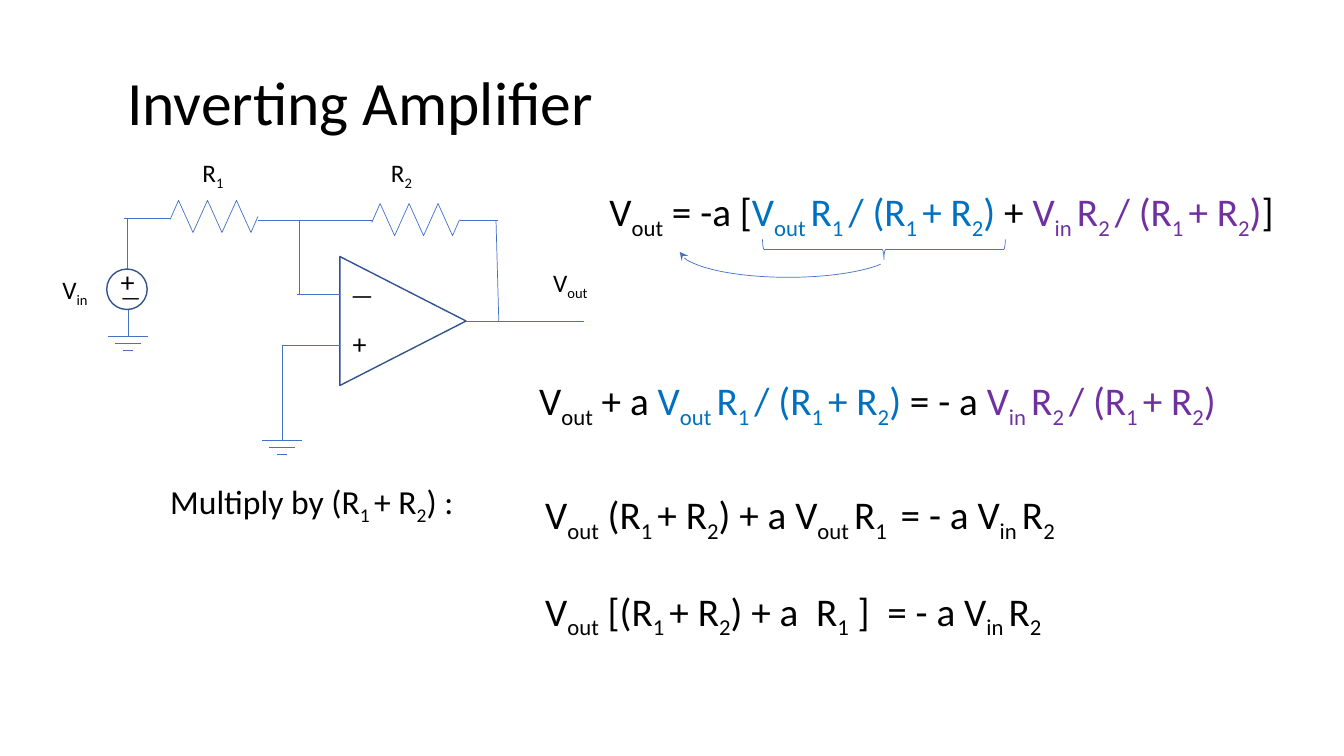
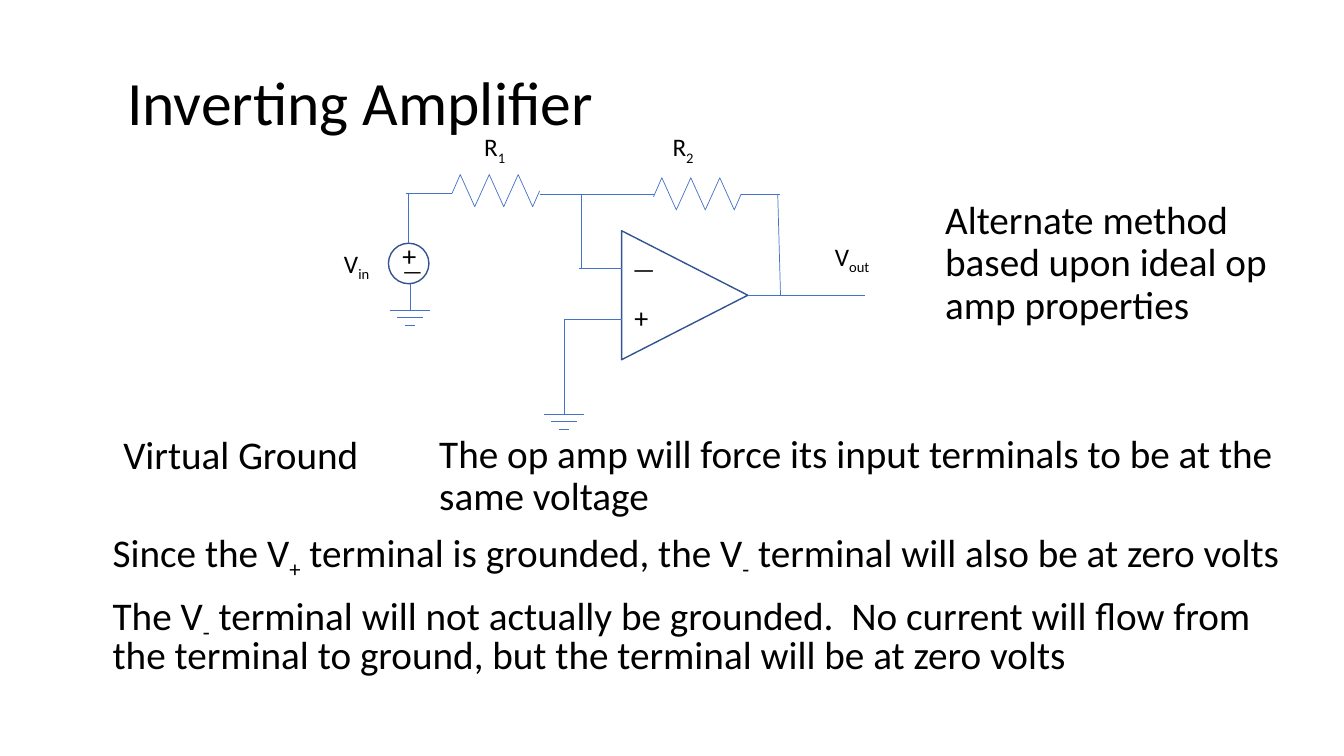
from dataclasses import dataclass

from lxml import etree
from pptx import Presentation
from pptx.dml.color import RGBColor
from pptx.enum.shapes import MSO_CONNECTOR, MSO_SHAPE
from pptx.enum.text import MSO_ANCHOR, PP_ALIGN
from pptx.oxml.ns import qn
from pptx.util import Cm, Pt

STRAIGHT = MSO_CONNECTOR.STRAIGHT
TRIANGLE = MSO_SHAPE.ISOSCELES_TRIANGLE
OVAL = MSO_SHAPE.OVAL
BRACE = MSO_SHAPE.RIGHT_BRACE
ARC = MSO_SHAPE.ARC
LEFT, CENTER = PP_ALIGN.LEFT, PP_ALIGN.CENTER
MIDDLE = MSO_ANCHOR.MIDDLE


@dataclass(frozen=True)
class Theme:
    font: str = "Calibri"
    ink: RGBColor = RGBColor.from_string("000000")
    wire: RGBColor = RGBColor.from_string("4472C4")
    outline: RGBColor = RGBColor.from_string("325491")
    feedback: RGBColor = RGBColor.from_string("0070C0")
    source: RGBColor = RGBColor.from_string("7030A0")
    title: int = 44
    body: int = 28
    note: int = 24
    plus: int = 20
    label: int = 18
    minus: int = 16
    thin: float = 0.5
    medium: float = 1


THEME = Theme()
SUM = "(R~1 ~+ R~2~)"
FEEDBACK = (f"V~out ~R~1 ~/ {SUM}", THEME.feedback)
SOURCE = (f"V~in ~R~2 ~/ {SUM}", THEME.source)


class Deck:
    def __init__(self, theme):
        self.theme = theme
        self.prs = Presentation()
        self.prs.slide_width, self.prs.slide_height = Cm(33.87), Cm(19.05)
        self.s = None
        self.shapes = None

    def slide(self, title):
        self.s = self.prs.slides.add_slide(self.prs.slide_layouts[5])
        self.shapes = self.s.shapes
        sp = self.s.shapes.title
        sp.left, sp.top, sp.width, sp.height = Cm(2.95), Cm(0.81), Cm(29.21), Cm(3.68)
        sp.text_frame.vertical_anchor = MIDDLE
        self.fill_text(sp.text_frame, [(title, None)], self.theme.title, spacing=0.9)

    def fill_text(self, tf, segments, size, align=LEFT, spacing=None, before=None):
        tf.word_wrap = True
        p = tf.paragraphs[0]
        p.alignment = align
        p.line_spacing = spacing
        if before is not None:
            p.space_before = Pt(before)
        p.font.name, p.font.size = self.theme.font, Pt(size)
        p.font.color.rgb = self.theme.ink
        for text, color in segments:
            for i, part in enumerate(text.split("~")):
                if not part:
                    continue
                r = p.add_run()
                r.text = part
                if color is not None:
                    r.font.color.rgb = color
                if i % 2:
                    r._r.get_or_add_rPr().set("baseline", "-25000")

    def text(self, x, y, w, h, *segments, size=None, align=LEFT, spacing=0.9):
        sp = self.shapes.add_textbox(Cm(x), Cm(y), Cm(w), Cm(h))
        pairs = [(seg, None) if isinstance(seg, str) else seg for seg in segments]
        self.fill_text(sp.text_frame, pairs, size or self.theme.body, align, spacing, 10)

    def label(self, x, y, text, size=None, w=1.45):
        sp = self.shapes.add_textbox(Cm(x), Cm(y), Cm(w), Cm(1.02))
        self.fill_text(sp.text_frame, [(text, None)], size or self.theme.label)

    def outline(self, sp, color, width):
        sp.shadow.inherit = False
        sp.fill.background()
        sp.line.color.rgb, sp.line.width = color, Pt(width)

    def shape(self, kind, x, y, w, h, color, width, rotation=0):
        sp = self.shapes.add_shape(kind, Cm(x), Cm(y), Cm(w), Cm(h))
        sp.rotation = rotation
        self.outline(sp, color, width)
        return sp

    def wire(self, x1, y1, x2, y2):
        cxn = self.shapes.add_connector(STRAIGHT, Cm(x1), Cm(y1), Cm(x2), Cm(y2))
        cxn.line.color.rgb, cxn.line.width = self.theme.wire, Pt(self.theme.thin)
        etree.SubElement(cxn._element.spPr, qn("a:effectLst"))

    def brace(self, x, y, w, h):
        self.shape(BRACE, x, y, w, h, self.theme.wire, self.theme.thin, 90)

    def arc_arrow(self, x, y, w, h):
        sp = self.shape(ARC, x, y, w, h, self.theme.wire, self.theme.thin)
        sp.adjustments[0], sp.adjustments[1] = 5.43, 107.26
        etree.SubElement(sp.line._get_or_add_ln(), qn("a:tailEnd"), type="stealth")

    def resistor(self, x, y):
        peaks = [(x + 0.21 + 0.365 * i, y + 0.81 * (i % 2)) for i in range(6)]
        points = peaks + [(x + 2.21, y + 0.41)]
        fb = self.shapes.build_freeform(Cm(x), Cm(y + 0.48))
        fb.add_line_segments([(Cm(px), Cm(py)) for px, py in points], close=False)
        self.outline(fb.convert_to_shape(), self.theme.wire, self.theme.thin)

    def ground(self, x, y):
        for half, drop in ((0.51, 0), (0.32, 0.17), (0.13, 0.36)):
            self.wire(x - half, y + drop, x + half, y + drop)

    def circuit(self, dx=0, dy=0):
        t = self.theme
        grp = self.s.shapes.add_group_shape()
        self.shapes = grp.shapes
        self.shape(TRIANGLE, 8.53, 6.5, 3.25, 3.18, t.outline, t.medium, 90)
        self.shape(OVAL, 2.69, 6.78, 1.02, 1.02, t.outline, t.medium)
        for points in (
            (7.49, 7.42, 8.57, 7.42),
            (7.11, 8.69, 8.57, 8.69),
            (7.11, 8.69, 7.11, 11.1),
            (11.75, 8.09, 14.71, 8.09),
            (6.5, 5.56, 9.4, 5.56),
            (7.54, 5.56, 7.54, 7.42),
            (3.2, 5.51, 3.2, 6.78),
            (3.12, 5.51, 4.29, 5.51),
            (12.5, 5.56, 12.57, 8.09),
            (11.58, 5.56, 12.55, 5.56),
            (3.23, 7.8, 3.23, 8.48),
        ):
            self.wire(*points)
        self.resistor(4.29, 5.05)
        self.resistor(9.37, 5.13)
        self.ground(7.11, 11.1)
        self.ground(3.23, 8.48)
        for x, y, text in (
            (4.85, 3.84, "R~1~"),
            (9.6, 3.84, "R~2~"),
            (1.32, 6.78, "V~in~"),
            (13.69, 6.6, "V~out~"),
        ):
            self.label(x, y, text)
        for x, y, sign, size in (
            (8.59, 6.91, "—", t.label),
            (8.64, 8.1, "+", t.plus),
            (2.79, 6.53, "+", t.plus),
            (2.79, 7.01, "—", t.minus),
        ):
            self.label(x, y, sign, size, 0.86)
        grp.left, grp.top = grp.left + Cm(dx), grp.top + Cm(dy)
        self.shapes = self.s.shapes


def main():
    deck = Deck(THEME)

    deck.slide("Inverting Amplifier")
    deck.circuit()
    deck.text(15.11, 4.62, 18.62, 1.6, "V~out~ = -a [", FEEDBACK, " + ", SOURCE, "]")
    deck.brace(22.02, 3.23, 0.51, 6.12)
    deck.arc_arrow(17.12, 5.59, 5.49, 1.4)
    deck.text(13.34, 9.37, 19.41, 1.6, "V~out~ + a ", FEEDBACK, " = - a ", SOURCE)
    deck.text(4.04, 12.01, 15.11, 1.45, f"Multiply by {SUM} :", size=THEME.note)
    deck.text(13.49, 12.24, 16.15, 1.6, f"V~out~ {SUM} + a V~out ~R~1 ~ = - a V~in ~R~2~")
    deck.text(13.49, 14.68, 16.15, 1.6, f"V~out~ [{SUM} + a  R~1~ ]  = - a V~in ~R~2~")

    deck.slide("Inverting Amplifier")
    deck.circuit(7.1, -0.65)
    deck.text(23.57, 4.93, 8.71, 4.72, "Alternate method based upon ideal op amp properties")
    deck.text(1.7, 10.85, 8.74, 1.65, "Virtual Ground", align=CENTER)
    deck.text(10.82, 10.82, 22, 2.69,
              "The op amp will force its input terminals to be at the same voltage")
    deck.text(2.59, 13.21, 30.35, 1.65,
              "Since the V~+~ terminal is grounded, the V~-~ terminal will also be at zero volts")
    deck.text(2.59, 14.91, 30.35, 2.39,
              "The V~-~ terminal will not actually be grounded.  No current will flow from "
              "the terminal to ground, but the terminal will be at zero volts", spacing=0.8)

    deck.prs.save("out.pptx")


if __name__ == "__main__":
    main()
